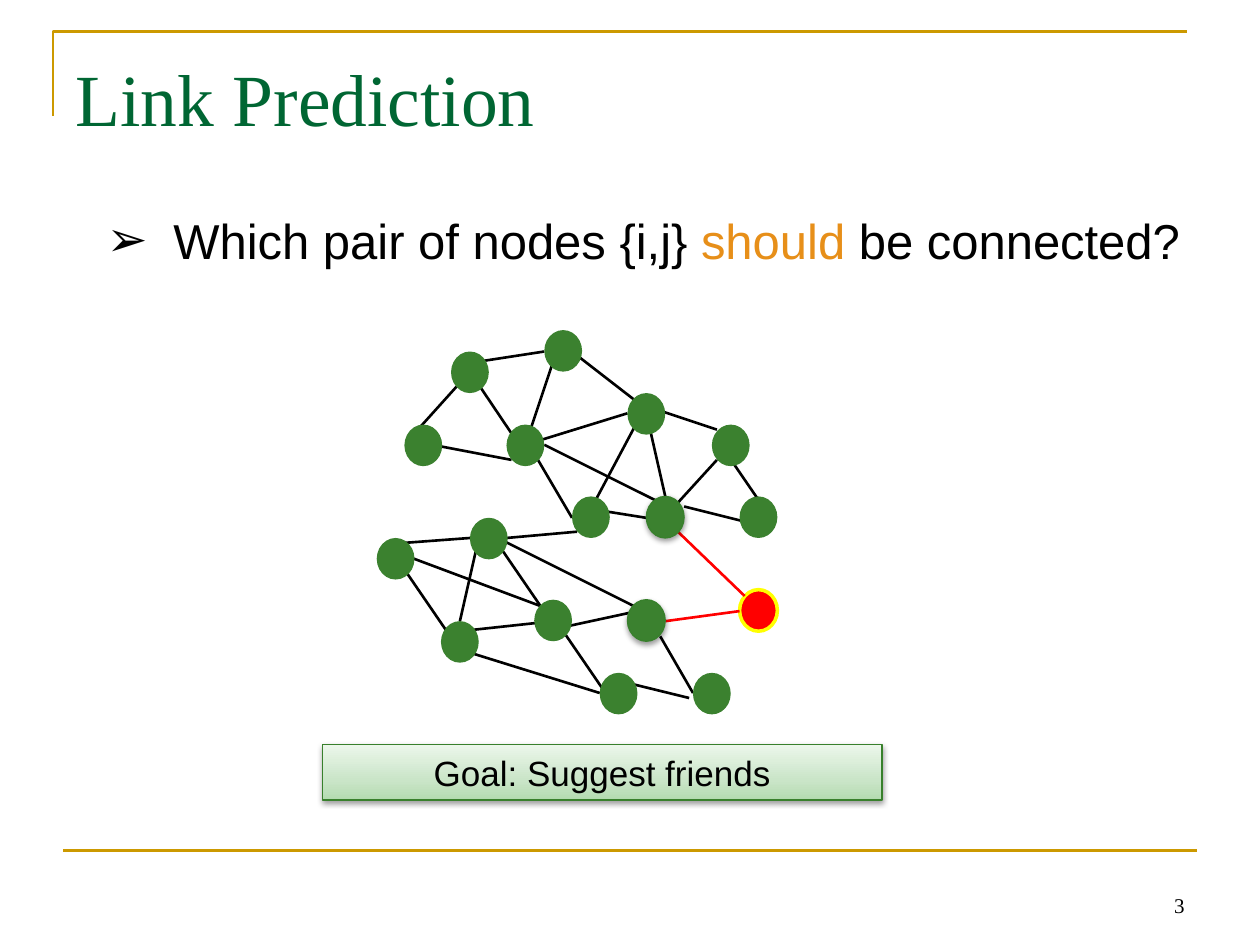
from copy import deepcopy

from lxml import etree
from pptx import Presentation
from pptx.dml.color import RGBColor
from pptx.enum.shapes import MSO_CONNECTOR, MSO_SHAPE
from pptx.enum.text import MSO_ANCHOR, MSO_AUTO_SIZE, PP_ALIGN
from pptx.oxml.ns import qn
from pptx.util import Pt

STRAIGHT = MSO_CONNECTOR.STRAIGHT
OVAL, RECTANGLE = MSO_SHAPE.OVAL, MSO_SHAPE.RECTANGLE
LEFT, CENTER, RIGHT = PP_ALIGN.LEFT, PP_ALIGN.CENTER, PP_ALIGN.RIGHT
TOP, MIDDLE, BOTTOM = MSO_ANCHOR.TOP, MSO_ANCHOR.MIDDLE, MSO_ANCHOR.BOTTOM
PX = 9144
NODE_WIDTH, NODE_HEIGHT = 30, 33
COLORS = {
    "gold": "CC9900", "title": "006633", "black": "000000", "orange": "E78F19",
    "node": "3B812F", "border": "38802C", "red": "FF0000", "yellow": "FFFF00",
}
GOAL_GRADIENT = [(0, "B3DBB0"), (0.35, "CAE5C8"), (1, "EBF6EA")]

BLACK_EDGES = [
    (569, 365, 538, 399), (543, 402, 591, 414), (524, 505, 550, 550),
    (432, 501, 506, 485), (498, 542, 547, 554), (513, 411, 469, 404),
    (503, 340, 469, 404), (454, 411, 427, 365), (458, 422, 402, 427),
    (392, 427, 429, 481), (365, 501, 439, 493), (447, 501, 484, 555),
    (321, 452, 358, 506), (380, 427, 365, 493), (572, 353, 609, 407),
    (506, 320, 569, 341), (513, 328, 528, 394), (454, 279, 503, 317),
    (417, 353, 498, 328), (439, 287, 417, 353), (373, 295, 410, 350),
    (328, 345, 373, 295), (380, 287, 432, 279), (373, 518, 476, 550),
    (343, 353, 406, 365), (373, 427, 306, 432), (395, 427, 503, 481),
    (432, 353, 540, 407), (306, 435, 429, 481),
]
RED_EDGES = [(528, 493, 587, 485), (538, 422, 591, 473)]
GREEN_NODES = [
    (321, 337), (358, 279), (454, 394), (402, 337), (432, 262),
    (498, 312), (587, 394), (565, 337), (373, 411), (350, 493),
    (424, 476), (476, 534), (550, 534), (299, 427),
]
CANDIDATE_NODES = [(513, 394), (498, 476)]
NEW_NODE = (587, 468)


def style_shape(shape, fill, line=None, width=0.75, shadow=False):
    shape.shadow.inherit = False
    if fill:
        shape.fill.solid()
        shape.fill.fore_color.rgb = RGBColor.from_string(COLORS[fill])
    else:
        shape.fill.background()
    if line:
        shape.line.color.rgb = RGBColor.from_string(COLORS[line])
        shape.line.width = Pt(width)
    else:
        shape.line.fill.background()
    if shadow:
        effects = shape._element.spPr.find(qn("a:effectLst"))
        outer = etree.SubElement(effects, qn("a:outerShdw"), blurRad="40000",
                                 dist="20000", dir="5400000", rotWithShape="0")
        color = etree.SubElement(outer, qn("a:srgbClr"), val=COLORS["black"])
        etree.SubElement(color, qn("a:alpha"), val="38000")


def write_text(shape, runs, size, font, alignment, anchor, top_inset=5):
    frame = shape.text_frame
    frame_format = {"word_wrap": True, "auto_size": MSO_AUTO_SIZE.NONE,
                    "vertical_anchor": anchor, "margin_top": top_inset * PX,
                    "margin_bottom": 5 * PX, "margin_left": 10 * PX,
                    "margin_right": 10 * PX}
    for name, value in frame_format.items():
        setattr(frame, name, value)
    paragraph = frame.paragraphs[0]
    paragraph.alignment = alignment
    for text, color in runs:
        run = paragraph.add_run()
        run.text = text
        for name, value in {"size": Pt(size), "name": font, "bold": False}.items():
            setattr(run.font, name, value)
        run.font.color.rgb = RGBColor.from_string(COLORS[color])
    return paragraph


presentation = Presentation()
presentation.slide_width, presentation.slide_height = 1000 * PX, 750 * PX
slide = presentation.slides.add_slide(presentation.slide_layouts[5])
shapes = slide.shapes

corner_builder = shapes.build_freeform(42, 92, scale=PX)
corner_builder.add_line_segments([(42, 25), (942, 25)], close=False)
style_shape(corner_builder.convert_to_shape(), None, "gold", 1.5)

title = shapes.title
title_box = {"left": 50, "top": 30, "width": 900, "height": 125}
for name, value in title_box.items():
    setattr(title, name, value * PX)
write_text(title, [("Link Prediction", "title")], 42, "Times New Roman", LEFT, TOP, 12)

question = shapes.add_textbox(21 * PX, 158 * PX, 979 * PX, 57 * PX)
question_runs = [("Which pair of nodes {i,j} ", "black"), ("should ", "orange"),
                 ("be connected?", "black")]
paragraph = write_text(question, question_runs, 28, "Arial", CENTER, TOP, 9)
properties = paragraph._p.get_or_add_pPr()
properties.set("marL", str(53 * PX))
properties.set("indent", str(-53 * PX))
etree.SubElement(properties, qn("a:buFont"), typeface="Arial")
etree.SubElement(properties, qn("a:buChar"), char="➢")

new_node = shapes.add_shape(OVAL, *[value * PX for value in (*NEW_NODE, NODE_WIDTH, NODE_HEIGHT)])
style_shape(new_node, "red", "yellow", 2)

footer_rule = [(50, 675, 950, 675)]
for color, edges in (("gold", footer_rule), ("black", BLACK_EDGES), ("red", RED_EDGES)):
    for edge in edges:
        connector = shapes.add_connector(STRAIGHT, *[value * PX for value in edge])
        connector.line.color.rgb = RGBColor.from_string(COLORS[color])
        connector.line.width = Pt(1.5)
        etree.SubElement(connector._element.spPr, qn("a:effectLst"))

for positions, border in ((GREEN_NODES, None), (CANDIDATE_NODES, "border")):
    for left, top in positions:
        node = shapes.add_shape(OVAL, left * PX, top * PX, NODE_WIDTH * PX, NODE_HEIGHT * PX)
        style_shape(node, "node", border, shadow=border is not None)

goal = shapes.add_shape(RECTANGLE, 256 * PX, 591 * PX, 444 * PX, 44 * PX)
style_shape(goal, "node", "border", shadow=True)
goal.fill.gradient()
goal.fill.gradient_angle = 90
stop_list = goal._element.spPr.find(".//" + qn("a:gsLst"))
stop_list.append(deepcopy(stop_list[0]))
for stop, (position, color) in zip(goal.fill.gradient_stops, GOAL_GRADIENT):
    stop.position = position
    stop.color.rgb = RGBColor.from_string(color)
write_text(goal, [("Goal: Suggest friends", "black")], 20, "Arial", CENTER, MIDDLE)

page_number = shapes.add_textbox(717 * PX, 683 * PX, 233 * PX, 50 * PX)
write_text(page_number, [("3", "black")], 12, "Times New Roman", RIGHT, BOTTOM)

presentation.save("out.pptx")
